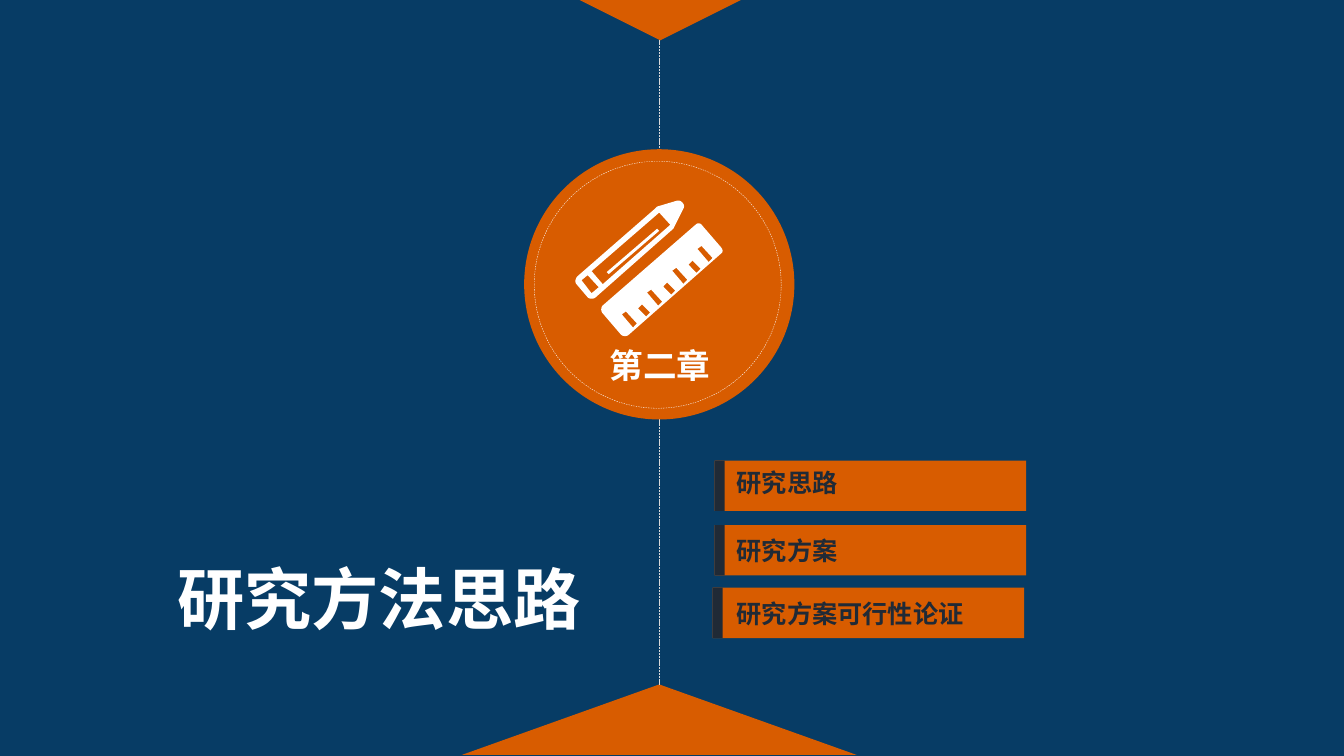
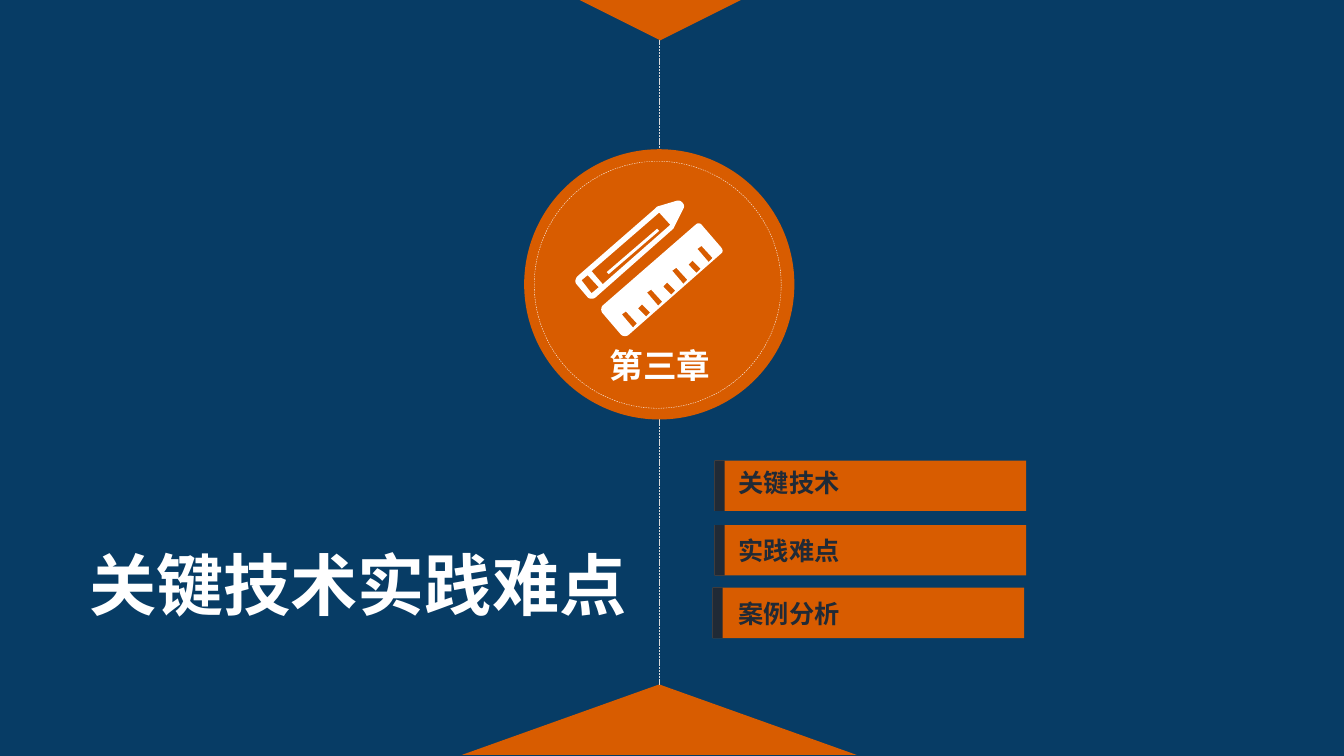
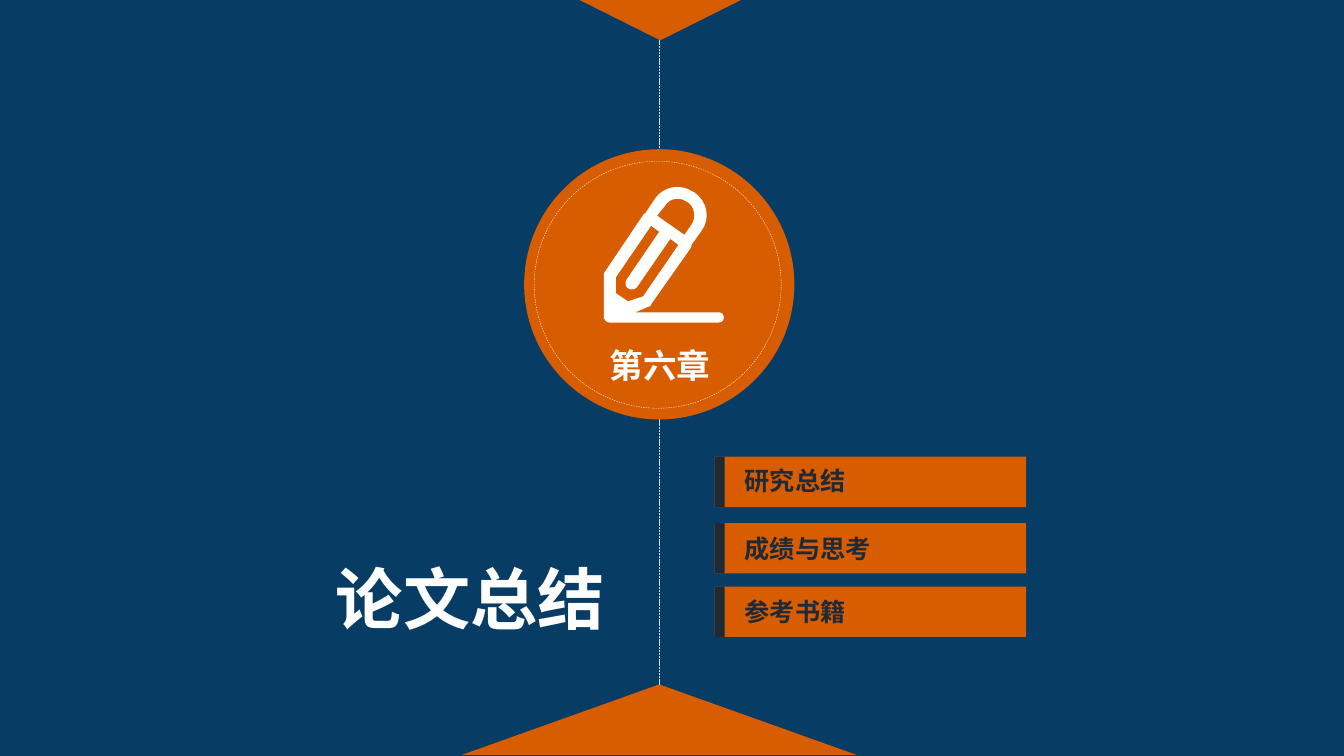
from dataclasses import dataclass
from lxml.etree import SubElement
from pptx import Presentation
from pptx.dml.color import RGBColor
from pptx.enum.dml import MSO_LINE
from pptx.enum.shapes import MSO_CONNECTOR, MSO_SHAPE
from pptx.enum.text import MSO_ANCHOR, MSO_AUTO_SIZE, PP_ALIGN
from pptx.oxml.ns import qn
from pptx.shapes.base import BaseShape
from pptx.slide import Slide
from pptx.util import Pt

# Colours and font
NAVY = RGBColor(0x07, 0x3C, 0x65)
ORANGE = RGBColor(0xD8, 0x5C, 0x00)
INK = RGBColor(0x20, 0x2A, 0x36)
WHITE = RGBColor(0xFF, 0xFF, 0xFF)
GREY = RGBColor(0xD9, 0xD9, 0xD9)
FONT = "Noto Sans CJK SC"

Box = tuple[float, float, float, float]
# An outline is a start point, then lines (x, y) and curves (two controls, end)
Outline = list[tuple[float, ...]]

AXIS = 470.9
STEM = ((16.6, 106.6), (276.5, 488.9))
BAR_W, BAR_H, TAB_W = 222.5, 36, 7.2


@dataclass(frozen=True)
class Style:
    size: float
    color: RGBColor
    align: PP_ALIGN
    anchor: MSO_ANCHOR = MSO_ANCHOR.TOP
    wrap: bool = True


TITLE = Style(48, WHITE, PP_ALIGN.CENTER)
BADGE = Style(24, WHITE, PP_ALIGN.CENTER, MSO_ANCHOR.MIDDLE)
TOPIC = Style(18, INK, PP_ALIGN.LEFT, wrap=False)


@dataclass(frozen=True)
class Row:
    left: float
    top: float
    text_top: float


@dataclass(frozen=True)
class Chapter:
    label: str
    title: str
    title_box: Box
    topics: tuple[str, str, str]
    topic_left: float
    rows: tuple[Row, Row, Row]
    icon: list[Outline]


# Pencil and ruler icon
PENCIL: list[Outline] = [
    [(434.9, 195.8), (433.4, 194.4), (469.4, 163.4), (470.9, 164.9)],
    [(427.7, 205.2), (419.8, 196.6), (415.4, 200.2), (422.6, 209.5)],
    [(478.8, 160.6), (470.9, 151.9), (422.6, 193.7), (430.6, 203)],
    [(419.8, 212.4), (411.8, 203), (410.4, 201.6, 411.1, 198.7, 412.6, 197.3),
     (468, 149), (469.4, 147.6), (483.8, 143.3),
     (485.3, 143.3, 486, 143.3, 487.4, 144.7),
     (488.9, 146.2, 488.9, 147.6, 488.2, 149), (481.7, 162), (481, 163.4),
     (425.5, 212.4), (424.1, 213.8, 421.2, 213.8, 419.8, 212.4)],
]
RULER: Outline = [
    (443.5, 239), (430.6, 223.9), (429.1, 222.5, 429.1, 219.6, 430.6, 218.2),
    (496.8, 160.6), (498.2, 159.1, 500.4, 159.1, 501.8, 161.3),
    (514.8, 176.4), (516.2, 177.8, 517, 180, 514.8, 181.4),
    (449.3, 239), (447.8, 240.5, 445, 240.5, 443.5, 239),
]
LONG: Outline = [(455, 231.1), (447.1, 222.5), (444.2, 224.6), (452.2, 234)]
SHORT: Outline = [(464.4, 223.2), (458.6, 217.4), (455.8, 220.3), (461.5, 226.1)]


def ticks(first: Outline, count: int) -> list[Outline]:
    return [[(x + 18 * i, y - 15.6 * i) for x, y in first] for i in range(count)]


TOOLS = PENCIL + [RULER] + ticks(LONG, 4) + ticks(SHORT, 3)

# Pen icon: body with base line, eraser, barrel
PEN: list[Outline] = [
    [(513.4, 223.2), (453.6, 223.2), (463.7, 218.9),
     (464.4, 218.9, 465.1, 218.2, 465.1, 217.4), (493.9, 176.4), (493.9, 175),
     (501.1, 164.9), (507.6, 156.2, 505.4, 144, 496.1, 137.5), (494.6, 136.8),
     (486, 131, 473.8, 133.2, 468, 141.8), (460.8, 152.6), (460.1, 152.6),
     (432, 194.4), (431.3, 195.1, 431.3, 195.8, 431.3, 196.6), (431.3, 225.4),
     (431.3, 226.8, 431.3, 227.5, 432, 228.2),
     (432.7, 229.7, 434.2, 230.4, 435.6, 230.4), (513.4, 230.4),
     (515.5, 230.4, 517, 229, 517, 226.8),
     (517, 224.6, 515.5, 223.2, 513.4, 223.2)],
    [(475.2, 146.9), (478.1, 141.8, 485.3, 140.4, 490.3, 144), (491.8, 144.7),
     (496.1, 148.3, 497.5, 155.5, 493.9, 160.6), (488.9, 167.8), (469.4, 154.1)],
    [(440, 209.5), (440, 198), (465.1, 161.3), (470.9, 165.6), (447.8, 199.4),
     (446.4, 201.6, 446.4, 204.5, 448.6, 205.9),
     (450.7, 207.4, 453.6, 206.6, 455, 205.2), (478.8, 170.6), (484.6, 175),
     (459.4, 211.7), (448.6, 215.3)],
]

# Chapters
ROWS = (Row(510.5, 329, 330.5), Row(510.5, 375.1, 378.7), Row(509, 419.8, 424.1))
LAST_ROWS = (Row(510.5, 326.2, 329), Row(510.5, 373.7, 377.3),
             Row(510.5, 419, 422.6))
CHAPTERS = (
    Chapter("第二章", "研究方法思路", (108, 394.6, 325.4, 65.5),
            ("研究思路", "研究方案", "研究方案可行性论证"), 519.1, ROWS, TOOLS),
    Chapter("第三章", "关键技术实践难点", (54, 384.5, 403.2, 65.5),
            ("关键技术", "实践难点", "案例分析"), 520.6, ROWS, TOOLS),
    Chapter("第六章", "论文总结", (232.6, 394.6, 206.6, 65.5),
            ("研究总结", "成绩与思考", "参考书籍"), 524.9, LAST_ROWS, PEN),
)


def paint(shape: BaseShape, color: RGBColor) -> None:
    shape.shadow.inherit = False
    shape.fill.solid()
    shape.fill.fore_color.rgb = color
    shape.line.fill.background()


def block(slide: Slide, kind: MSO_SHAPE, box: Box, color: RGBColor) -> BaseShape:
    shape = slide.shapes.add_shape(kind, *map(Pt, box))
    paint(shape, color)
    return shape


def write(shape: BaseShape, text: str, style: Style) -> None:
    frame = shape.text_frame
    layout = {"word_wrap": style.wrap, "vertical_anchor": style.anchor,
              "auto_size": MSO_AUTO_SIZE.NONE}
    for key, value in layout.items():
        setattr(frame, key, value)
    line = frame.paragraphs[0]
    line.alignment = style.align
    run = line.add_run()
    run.text = text
    run.font.color.rgb = style.color
    for key, value in {"name": FONT, "size": Pt(style.size), "bold": True}.items():
        setattr(run.font, key, value)
    SubElement(run._r.get_or_add_rPr(), qn("a:ea")).set("typeface", FONT)


def label(slide: Slide, box: Box, text: str, style: Style) -> None:
    write(slide.shapes.add_textbox(*map(Pt, box)), text, style)


def trace(outline: Outline) -> list[tuple[int, int]]:
    """Turn lines and curves into a row of points."""
    points = [outline[0]]
    for step in outline[1:]:
        if len(step) == 2:
            points.append(step)
            continue
        ends = (*points[-1], *step)
        for i in range(1, 9):
            t = i / 8
            parts = ((1 - t) ** 3, 3 * t * (1 - t) ** 2, 3 * t * t * (1 - t), t ** 3)
            points.append(tuple(sum(p * v for p, v in zip(parts, ends[axis::2]))
                                for axis in (0, 1)))
    return [(Pt(x), Pt(y)) for x, y in points]


def draw_icon(slide: Slide, icon: list[Outline]) -> None:
    first, *rest = map(trace, icon)
    pen = slide.shapes.build_freeform(*first[0])
    pen.add_line_segments(first[1:])
    for points in rest:
        pen.move_to(*points[0])
        pen.add_line_segments(points[1:])
    paint(pen.convert_to_shape(), WHITE)


def draw_frame(slide: Slide) -> None:
    # Dashed axis between the two arrowheads
    block(slide, MSO_SHAPE.ISOSCELES_TRIANGLE, (329.8, 488.9, 282.2, 50.4), ORANGE)
    for top, end in STEM:
        stem = slide.shapes.add_connector(
            MSO_CONNECTOR.STRAIGHT, Pt(AXIS), Pt(top), Pt(AXIS), Pt(end))
        stem.line.color.rgb = GREY
        stem.line.width = Pt(0.5)
        stem.line.dash_style = MSO_LINE.SQUARE_DOT
        SubElement(stem._element.spPr, qn("a:effectLst"))
    head = block(slide, MSO_SHAPE.ISOSCELES_TRIANGLE, (414, 0, 115.2, 28.8), ORANGE)
    head.rotation = 180
    # Badge with a fine ring
    block(slide, MSO_SHAPE.OVAL, (374.4, 106.6, 193, 193), ORANGE)
    ring = block(slide, MSO_SHAPE.OVAL, (381.6, 115.2, 176.4, 176.4), ORANGE)
    ring.fill.background()
    ring.line.color.rgb = WHITE
    ring.line.width = Pt(0.25)
    ring.line.dash_style = MSO_LINE.DASH


def draw_topics(slide: Slide, chapter: Chapter) -> None:
    for row, topic in zip(chapter.rows, chapter.topics):
        for width, color in ((BAR_W, ORANGE), (TAB_W, INK)):
            block(slide, MSO_SHAPE.RECTANGLE,
                  (row.left, row.top, width, BAR_H), color)
        width = len(topic) * TOPIC.size + 14.4
        label(slide, (chapter.topic_left, row.text_top, width, 28.8), topic, TOPIC)


def draw_title(slide: Slide, chapter: Chapter) -> None:
    title = slide.shapes.title
    for key, value in zip(("left", "top", "width", "height"), chapter.title_box):
        setattr(title, key, Pt(value))
    write(title, chapter.title, TITLE)


def main() -> None:
    deck = Presentation()
    deck.slide_width, deck.slide_height = Pt(960), Pt(540)
    ground = deck.slide_master.background.fill
    ground.solid()
    ground.fore_color.rgb = NAVY
    for chapter in CHAPTERS:
        slide = deck.slides.add_slide(deck.slide_layouts[5])
        draw_frame(slide)
        label(slide, (378, 241.9, 187.2, 37.4), chapter.label, BADGE)
        draw_icon(slide, chapter.icon)
        draw_title(slide, chapter)
        draw_topics(slide, chapter)
    deck.save("out.pptx")


if __name__ == "__main__":
    main()
